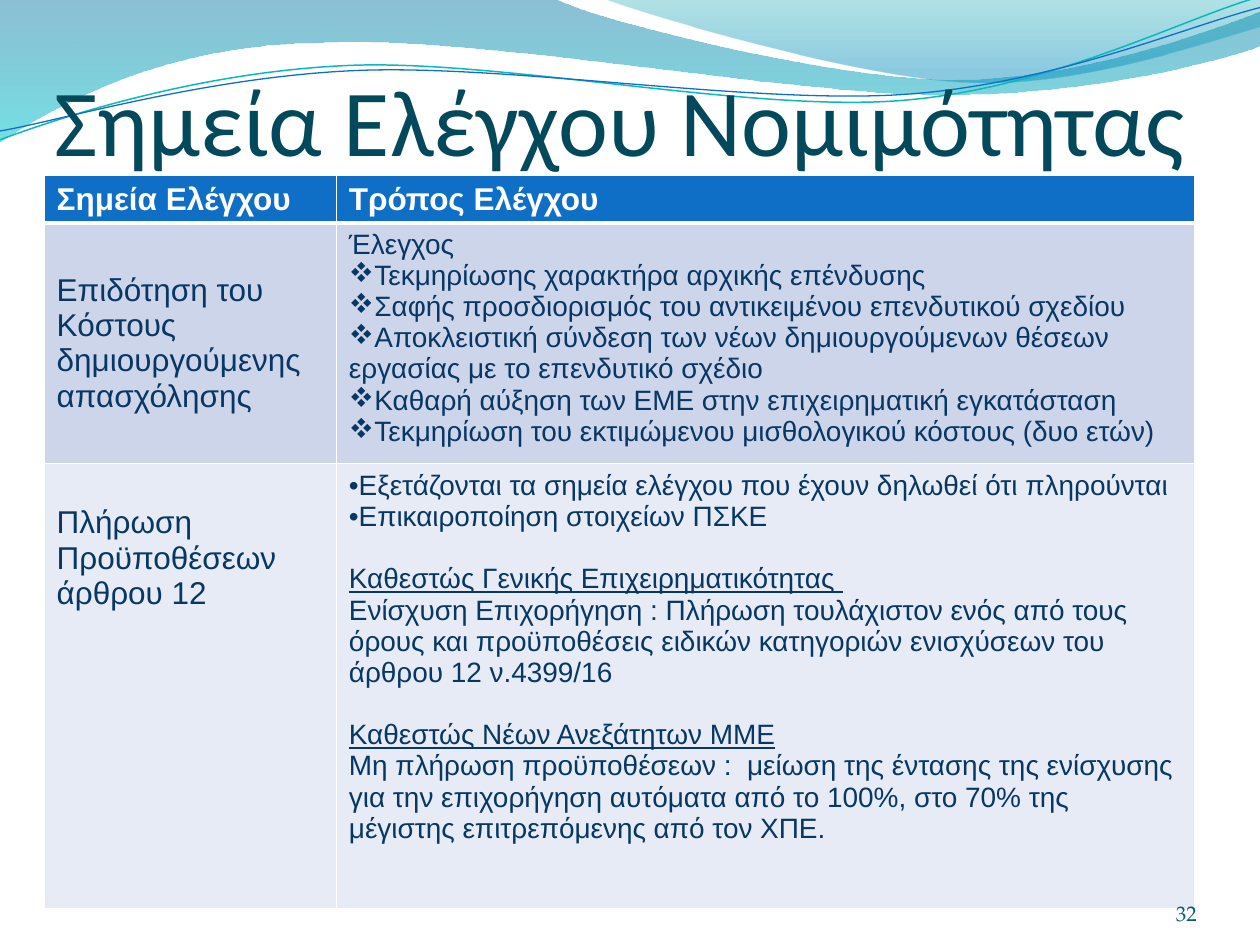
"""Build the slide on legality checkpoints: wave header, title and table."""
from lxml import etree
from pptx import Presentation
from pptx import util as u
from pptx.dml.color import RGBColor
from pptx.enum import text
from pptx.oxml.ns import qn

WHITE = RGBColor(255, 255, 255)
BLUE = RGBColor(0x0F, 0x6F, 0xC6)
TEAL = RGBColor(0x0A, 0xB8, 0xBF)
NAVY = RGBColor(0x08, 0x37, 0x63)
DARK = RGBColor(0x03, 0x49, 0x5C)
PAGE = RGBColor(0x04, 0x5C, 0x75)
BAND = RGBColor(0xCC, 0xD5, 0xEA)
PALE = RGBColor(0xE7, 0xEB, 0xF5)

TITLE = "Σημεία Ελέγχου Νομιμότητας"
HEADS = ["Σημεία Ελέγχου", "Τρόπος Ελέγχου"]
TOPICS = ["Επιδότηση του Κόστους δημιουργούμενης απασχόλησης",
          "Πλήρωση Προϋποθέσεων άρθρου 12"]
CHECKS = [
    [("", "Έλεγχος"),
     ("star", "Τεκμηρίωσης χαρακτήρα αρχικής επένδυσης"),
     ("star", "Σαφής προσδιορισμός του αντικειμένου επενδυτικού σχεδίου"),
     ("star", "Αποκλειστική σύνδεση των νέων δημιουργούμενων θέσεων "
              "εργασίας με το επενδυτικό σχέδιο"),
     ("star", "Καθαρή αύξηση των ΕΜΕ στην επιχειρηματική εγκατάσταση"),
     ("star", "Τεκμηρίωση του εκτιμώμενου μισθολογικού κόστους (δυο ετών)")],
    [("dot", "Εξετάζονται τα σημεία ελέγχου που έχουν δηλωθεί ότι πληρούνται"),
     ("dot", "Επικαιροποίηση στοιχείων ΠΣΚΕ"),
     ("head", "Καθεστώς Γενικής Επιχειρηματικότητας "),
     ("", "Ενίσχυση Επιχορήγηση : Πλήρωση τουλάχιστον ενός από τους όρους και "
          "προϋποθέσεις ειδικών κατηγοριών ενισχύσεων του άρθρου 12 ν.4399/16"),
     ("head", "Καθεστώς Νέων Ανεξάτητων ΜΜΕ"),
     ("", "Μη πλήρωση προϋποθέσεων :  μείωση της έντασης της ενίσχυσης για την "
          "επιχορήγηση αυτόματα από το 100%, στο 70% της μέγιστης "
          "επιτρεπόμενης από τον ΧΠΕ.")],
]
BULLETS = {"star": ("Wingdings", "v"), "dot": ("Arial", "•")}
COLS = [2.32, 6.81]
ROWS = [0.38, 1.91, 3.53]

WAVES = [
    ([(0, -0.01), (4.4, -0.01),
      (4.76, 0.17, 6.64, 0.63, 7.58, 0.63), (8.53, 0.63, 9.58, 0.26, 10, 0.09),
      (10.01, 0.36), (9.83, 0.44, 8.7, 0.76, 7.46, 0.75),
      (6.22, 0.75, 3.82, 0.28, 2.57, 0.34),
      (1.29, 0.35, 0.46, 0.83, -0.01, 1.13)],
     [(0, "0074A1", 45), (1, "00C6CF", 55)]),
    ([(4.79, -0.01), (5.09, 0.11, 6.82, 0.62, 7.69, 0.65),
      (8.56, 0.69, 9.61, 0.32, 10, 0.21), (10, 0)],
     [(0, "00A1A9", 30), (0.8, "008BBF", 45)]),
]
LINES = [
    ([(0, 1.11), (0.48, 0.93, 1.58, 0.57, 2.77, 0.52),
      (3.95, 0.47, 5.93, 0.89, 7.13, 0.8),
      (8.33, 0.71, 9.38, 0.15, 9.98, -0.02)], TEAL, 0.85),
    ([(0, 1.04), (0.47, 0.96, 1.64, 0.61, 2.83, 0.56),
      (4.03, 0.51, 5.97, 0.83, 7.17, 0.75),
      (8.36, 0.67, 9.41, 0.21, 10, 0.06)], BLUE, 0.75),
]


def draw(slide, route, close):
    """Add a freeform; parts of six numbers become cubic curves."""
    pts = [(u.Inches(part[i]), u.Inches(part[i + 1]))
           for part in route for i in range(0, len(part), 2)]
    pen = slide.shapes.build_freeform(*pts[0])
    pen.add_line_segments(pts[1:], close=close)
    shape = pen.convert_to_shape()
    shape.shadow.inherit = False
    legs = iter(list(shape._element.iter(qn("a:lnTo"))))
    for part in route[1:]:
        trio = [next(legs) for i in range(len(part) // 2)]
        if len(trio) == 3:
            curve = etree.Element(qn("a:cubicBezTo"))
            trio[0].addprevious(curve)
            for leg in trio:
                curve.append(leg[0])
                leg.getparent().remove(leg)
    return shape


def add_waves(slide):
    """Draw the tinted waves and the thin lines over them."""
    for route, tints in WAVES:
        shape = draw(slide, route, True)
        shape.line.fill.background()
        shape.fill.gradient()
        shape.fill.gradient_angle = 270
        for stop, (pos, tint, alpha) in zip(shape.fill.gradient_stops, tints):
            stop.position = pos
            stop.color.rgb = RGBColor.from_string(tint)
        marks = shape._element.spPr.iter(qn("a:srgbClr"))
        for mark, (pos, tint, alpha) in zip(marks, tints):
            etree.SubElement(mark, qn("a:alpha"), val=str(alpha * 1000))
    for route, color, width in LINES:
        shape = draw(slide, route, False)
        shape.fill.background()
        shape.line.color.rgb = color
        shape.line.width = u.Pt(width)


def style(para, size, color, face="Arial", bold=False):
    """Set the font of a paragraph."""
    font = para.font
    font.name, font.size, font.bold = face, u.Pt(size), bold
    font.color.rgb = color


def paint(cell, color, base):
    """Give a cell its fill and white borders."""
    cell.fill.solid()
    cell.fill.fore_color.rgb = color
    props = cell._tc.get_or_add_tcPr()
    for i, side in enumerate("LRTB"):
        width = base if side == "B" else 1
        line = etree.Element(qn("a:ln" + side), w=str(u.Pt(width)))
        fill = etree.SubElement(line, qn("a:solidFill"))
        etree.SubElement(fill, qn("a:srgbClr"), val=str(WHITE))
        props.insert(i, line)


def write(cell, items):
    """Write plain, bulleted and underlined paragraphs in a cell."""
    frame = cell.text_frame
    for i, (kind, words) in enumerate(items):
        para = frame.add_paragraph() if i else frame.paragraphs[0]
        para.text = words
        if kind == "head":
            para.space_before = u.Pt(18)
        elif kind:
            face, mark = BULLETS[kind]
            props = para._p.get_or_add_pPr()
            props.set("marL", "0")
            props.set("indent", "0")
            etree.SubElement(props, qn("a:buFont"), typeface=face)
            etree.SubElement(props, qn("a:buChar"), char=mark)
        if kind == "dot":
            para.alignment = text.PP_ALIGN.JUSTIFY
        style(para, 16, NAVY)
        para.font.underline = kind == "head"


def add_grid(slide):
    """Add the table of checkpoints."""
    grid = slide.shapes.add_table(
        len(ROWS), len(COLS), u.Inches(0.35), u.Inches(1.39),
        u.Inches(sum(COLS)), u.Inches(sum(ROWS))).table
    for col, width in zip(grid.columns, COLS):
        col.width = u.Inches(width)
    for row, height in zip(grid.rows, ROWS):
        row.height = u.Inches(height)
    for r, color in enumerate([BLUE, BAND, PALE]):
        for cell in grid.rows[r].cells:
            paint(cell, color, 1 if r else 3)
    for c, words in enumerate(HEADS):
        cell = grid.cell(0, c)
        cell.text = words
        style(cell.text_frame.paragraphs[0], 18, WHITE, bold=True)
    for r, (topic, items) in enumerate(zip(TOPICS, CHECKS), 1):
        cell = grid.cell(r, 0)
        cell.text = topic
        style(cell.text_frame.paragraphs[0], 18, NAVY)
        write(grid.cell(r, 1), items)
    grid.cell(1, 0).vertical_anchor = text.MSO_ANCHOR.MIDDLE
    grid.cell(2, 0).margin_top = u.Inches(0.33)


def label(shape, box, words, align, top, *look):
    """Place a bottom-anchored line of text."""
    shape.left, shape.top, shape.width, shape.height = map(u.Inches, box)
    frame = shape.text_frame
    frame.text = words
    frame.word_wrap = True
    frame.auto_size = text.MSO_AUTO_SIZE.NONE
    frame.vertical_anchor = text.MSO_ANCHOR.BOTTOM
    frame.margin_left = frame.margin_right = frame.margin_bottom = 0
    frame.margin_top = u.Inches(top)
    frame.paragraphs[0].alignment = align
    style(frame.paragraphs[0], *look)


def main():
    """Build and save the deck."""
    deck = Presentation()
    deck.slide_width, deck.slide_height = u.Inches(10), u.Inches(7.5)
    slide = deck.slides.add_slide(deck.slide_layouts[5])
    add_waves(slide)
    title = slide.shapes.title
    label(title, (0.43, 0.84, 9, 0.55), TITLE, text.PP_ALIGN.LEFT, 0.05,
          54, DARK, "Calibri")
    slide.shapes._spTree.append(title._element)
    add_grid(slide)
    label(slide.shapes.add_textbox(0, 0, 0, 0), (8.67, 6.95, 0.83, 0.4), "32",
          text.PP_ALIGN.RIGHT, 0, 12, PAGE, "TeX Gyre Pagella")
    deck.save("out.pptx")


if __name__ == "__main__":
    main()
